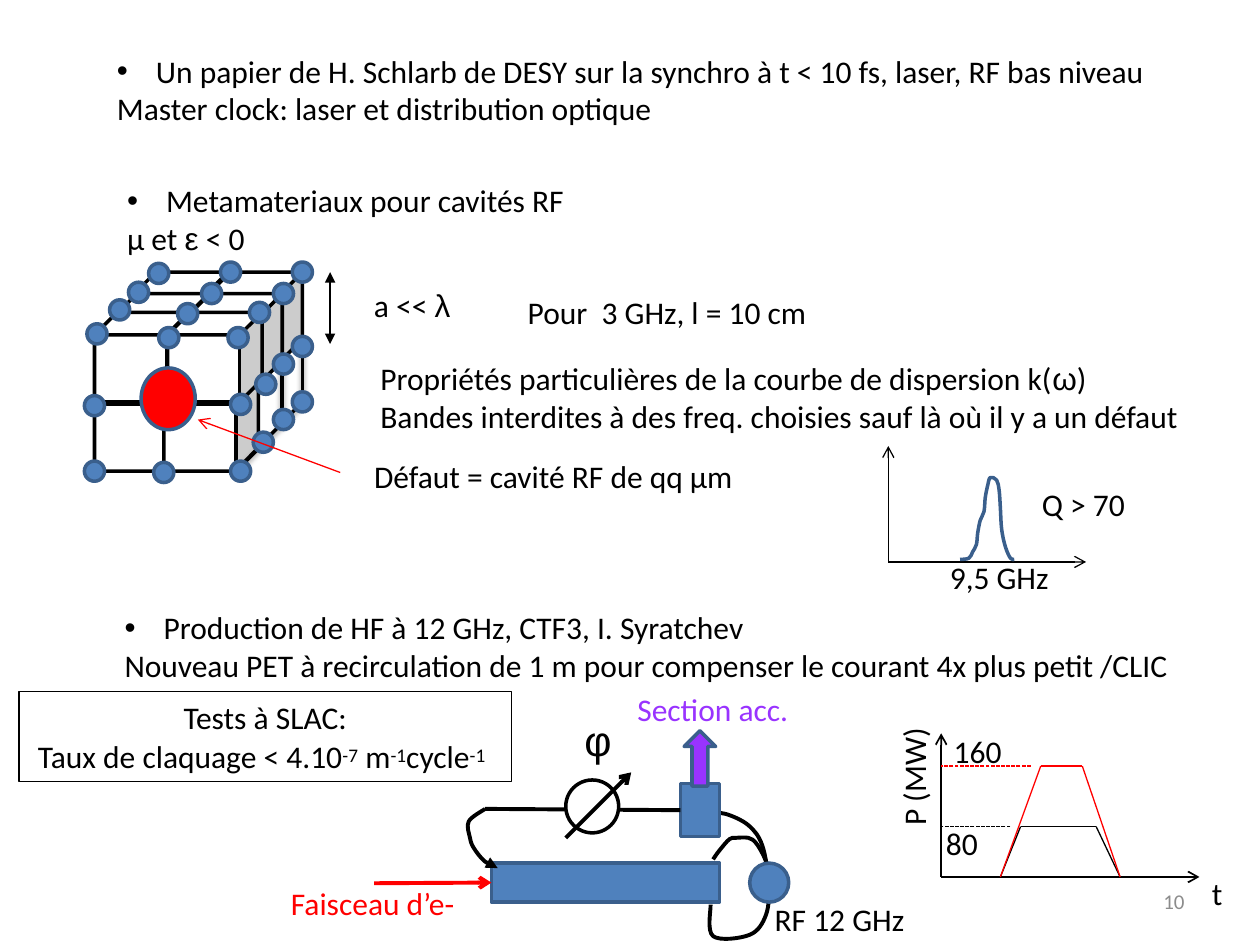
"""Build the slide on synchronisation, metamaterials and 12 GHz production."""
from dataclasses import dataclass
from itertools import groupby
from typing import List, Tuple

from lxml import etree
from pptx import Presentation
from pptx.dml.color import RGBColor
from pptx.enum import dml, shapes, text
from pptx.oxml import ns
from pptx.util import Inches, Pt

Point = Tuple[float, float]
Kind = shapes.MSO_SHAPE
BLACK, RED, BLUE, NAVY, PURPLE = "000000", "FF0000", "4F81BD", "3A5F8C", "9933FF"


@dataclass
class Label:
    x: float
    y: float
    w: float
    words: str
    h: float = 0.4
    color: str = BLACK
    size: int = 18
    bullet: bool = False
    turn: int = 0
    align: text.PP_ALIGN = text.PP_ALIGN.LEFT


@dataclass
class Wire:
    start: Point
    end: Point
    color: str = BLACK
    width: float = 0.75
    head: str = ""
    tail: str = ""
    dash: bool = False
    shade: bool = False


@dataclass
class Curve:
    points: List[Point]
    color: str = BLACK
    width: float = 2.25
    tail: str = ""


def rgb(code: str) -> RGBColor:
    return RGBColor.from_string(code)


def stroke(line, color: str, width: float, head: str = "", tail: str = "") -> None:
    line.color.rgb = rgb(color)
    line.width = Pt(width)
    for tag, kind in (("a:headEnd", head), ("a:tailEnd", tail)):
        if kind:
            etree.SubElement(line._get_or_add_ln(), ns.qn(tag), type=kind)


def add_shape(slide, kind, x, y, w, h, fill=BLUE, line=NAVY):
    item = slide.shapes.add_shape(kind, Inches(x), Inches(y), Inches(w), Inches(h))
    item.shadow.inherit = False
    item.fill.solid()
    item.fill.fore_color.rgb = rgb(fill)
    stroke(item.line, line, 2)
    return item


def add_wire(slide, wire: Wire):
    ends = [Inches(v) for v in wire.start + wire.end]
    item = slide.shapes.add_connector(shapes.MSO_CONNECTOR.STRAIGHT, *ends)
    if wire.dash:
        item.line.dash_style = dml.MSO_LINE.SQUARE_DOT
    stroke(item.line, wire.color, wire.width, wire.head, wire.tail)
    if not wire.shade:
        etree.SubElement(item._element.spPr, ns.qn("a:effectLst"))
    return item


def add_chain(slide, points: List[Point], color: str) -> None:
    for start, end in zip(points, points[1:]):
        add_wire(slide, Wire(start, end, color))


def controls(points: List[Point]) -> List[Point]:
    """Return three Bezier points per step of a smooth curve."""
    ext = [points[0]] + points + [points[-1]]
    out = []
    for a, b, c, d in zip(ext, ext[1:], ext[2:], ext[3:]):
        out += [tuple(q + (r - p) / 6 for p, q, r in zip(a, b, c)),
                tuple(r - (s - q) / 6 for q, r, s in zip(b, c, d)), c]
    return out


def add_curve(slide, curve: Curve) -> None:
    track = [(Inches(x), Inches(y)) for x, y in curve.points[:1] + controls(curve.points)]
    route = slide.shapes.build_freeform(*track[0])
    route.add_line_segments(track[1:], close=False)
    item = route.convert_to_shape()
    steps = list(item._element.iter(ns.qn("a:lnTo")))
    for trio in zip(steps[::3], steps[1::3], steps[2::3]):
        bend = etree.SubElement(trio[0].getparent(), ns.qn("a:cubicBezTo"))
        for step in trio:
            bend.append(step[0])
            step.getparent().remove(step)
    item.shadow.inherit = False
    item.fill.background()
    stroke(item.line, curve.color, curve.width, tail=curve.tail)


def add_bullet(para) -> None:
    props = para._p.get_or_add_pPr()
    props.set("marL", str(Inches(0.31)))
    props.set("indent", str(-Inches(0.31)))
    props.insert(0, props.makeelement(ns.qn("a:buFont"), {"typeface": "Arial"}))
    props.insert(1, props.makeelement(ns.qn("a:buChar"), {"char": "•"}))


def add_runs(para, words: str) -> None:
    """Write runs, with Greek in Arial and text between carets raised."""
    for n, part in enumerate(words.split("^")):
        for greek, chars in groupby(part, lambda c: c in "ελωφ"):
            run = para.add_run()
            run.text = "".join(chars)
            if greek:
                run.font.name = "Arial"
            if n % 2:
                run.font.size = Pt(19)
                run._r.get_or_add_rPr().set("baseline", "20000")


def add_label(slide, label: Label):
    box = slide.shapes.add_textbox(*map(Inches, (label.x, label.y, label.w, label.h)))
    box.rotation = label.turn
    frame = box.text_frame
    frame.word_wrap = False
    frame.auto_size = text.MSO_AUTO_SIZE.SHAPE_TO_FIT_TEXT
    for n, words in enumerate(label.words.split("\n")):
        para = frame.add_paragraph() if n else frame.paragraphs[0]
        para.alignment = label.align
        para.font.name, para.font.size = "Calibri", Pt(label.size)
        para.font.color.rgb = rgb(label.color)
        add_runs(para, words)
        if label.bullet and n == 0:
            add_bullet(para)
    return box


CUBES = [(1.06, 2.16), (1.65, 2.16), (0.91, 2.33), (1.49, 2.33),
         (0.75, 3.03), (0.75, 2.48), (1.3, 3.03), (1.33, 2.48)]
EDGES = [((2.4, 2.68), (2.4, 3.19)), ((1.87, 3.74), (2.4, 3.19)), ((2.24, 2.87), (2.24, 3.38))]
NODES = [(2.32, 2.08), (2.17, 2.25), (1.98, 2.4), (2.32, 2.67), (2.17, 2.81), (2.32, 3.11),
         (2.17, 3.25), (2.01, 3.43), (1.83, 3.66), (2.03, 2.97), (1.6, 2.25), (1.41, 2.41),
         (0.69, 2.57), (0.67, 3.66), (0.67, 3.14), (1.26, 2.6), (1.81, 2.6), (1.83, 3.13),
         (1.22, 3.67), (0.87, 2.38), (1.02, 2.24), (1.18, 2.09), (1.75, 2.08)]
WIRES = [Wire((2.62, 2.16), (2.62, 2.73), width=1.25, head="triangle", tail="triangle"),
         Wire((2.7, 3.75), (1.57, 3.33), RED, tail="arrow"),
         Wire((7.05, 4.46), (7.05, 3.54), tail="arrow"),
         Wire((7.05, 4.46), (8.62, 4.46), tail="arrow"),
         Wire((7.47, 6.96), (7.47, 5.82), width=1, tail="arrow"),
         Wire((7.47, 6.96), (9.52, 6.96), width=1, tail="arrow"),
         Wire((8.02, 6.56), (7.47, 6.56), dash=True),
         Wire((8.18, 6.08), (7.47, 6.08), RED, dash=True)]
PEAK = Curve([(7.62, 4.44), (7.69, 4.43), (7.72, 4.38), (7.75, 4.32), (7.76, 4.23), (7.78, 4.13),
              (7.81, 4.06), (7.82, 3.95), (7.84, 3.85), (7.86, 3.79), (7.91, 3.81), (7.93, 3.89),
              (7.94, 4.03), (7.95, 4.2), (7.98, 4.34), (8.02, 4.43), (8.05, 4.44)], NAVY, 2)
LOOPS = [Curve([(5.64, 7.18), (5.66, 7.43), (5.95, 7.42), (6.08, 7.26), (6.1, 7.01), (6.05, 6.71),
                (5.94, 6.55), (5.76, 6.46), (5.65, 6.46)]),
         Curve([(5.66, 6.82), (5.71, 6.75), (5.79, 6.66), (5.84, 6.65), (5.94, 6.65), (6, 6.69),
                (6.06, 6.79), (6.1, 6.89)])]
RETURN = Curve([(3.85, 6.42), (3.72, 6.52), (3.73, 6.65), (3.76, 6.73), (3.84, 6.83),
                (3.91, 6.86), (3.95, 6.89)], tail="triangle")
LABELS = [
    Label(0.83, 0.36, 8.46, "Un papier de H. Schlarb de DESY sur la synchro à t < 10 fs, laser, RF bas niveau\n"
          "Master clock: laser et distribution optique", 0.71, bullet=True),
    Label(0.91, 1.39, 3.71, "Metamateriaux pour cavités RF\nµ et ε < 0", 0.71, bullet=True),
    Label(2.87, 2.22, 0.83, "a << λ"),
    Label(4.09, 2.28, 2.44, "Pour  3 GHz, l = 10 cm"),
    Label(2.92, 2.8, 6.61, "Propriétés particulières de la courbe de dispersion k(ω)\n"
          "Bandes interdites à des freq. choisies sauf là où il y a un défaut", 0.71),
    Label(2.87, 3.58, 3.09, "Défaut = cavité RF de qq µm"),
    Label(7.44, 4.38, 1, "9,5 GHz"),
    Label(8.17, 3.8, 0.87, "Q > 70"),
    Label(0.89, 4.78, 8.57, "Production de HF à 12 GHz, CTF3, I. Syratchev\n"
          "Nouveau PET à recirculation de 1 m pour compenser le courant 4x plus petit /CLIC", 0.71, bullet=True),
    Label(4.96, 5.43, 1.42, "Section acc.", color=PURPLE),
    Label(4.54, 5.62, 0.38, "φ", 0.5, size=24),
    Label(2.21, 6.97, 1.51, "Faisceau d’e-", color=RED),
    Label(6.05, 7.09, 1.24, "RF 12 GHz"),
    Label(6.76, 5.96, 0.98, "P (MW)", turn=270),
    Label(7.41, 6.49, 0.46, "80"),
    Label(7.47, 5.76, 0.59, "160"),
    Label(9.52, 6.89, 0.29, "t")]
TESTS = Label(0.15, 5.49, 3.91, "Tests à SLAC:\nTaux de claquage < 4.10^-7^ m^-1^cycle^-1^ ", 0.71,
              align=text.PP_ALIGN.CENTER)
NUMBER = Label(7.17, 6.95, 2.33, "10", color="8C8C8C", size=12, align=text.PP_ALIGN.RIGHT)


def draw_lattice(slide) -> None:
    for x, y in CUBES:
        add_shape(slide, Kind.CUBE, x, y, 0.75, 0.71, "FFFFFF", BLACK)
    for start, end in EDGES:
        add_wire(slide, Wire(start, end, width=2, shade=True))
    for x, y in NODES:
        add_shape(slide, Kind.FLOWCHART_CONNECTOR, x, y, 0.16, 0.16)
    add_shape(slide, Kind.FLOWCHART_CONNECTOR, 1.12, 2.92, 0.43, 0.49, RED)


def draw_circuit(slide) -> None:
    tube = add_shape(slide, Kind.RECTANGLE, 3.9, 6.85, 1.81, 0.31)
    for loop in LOOPS:
        add_curve(slide, loop)
    add_shape(slide, Kind.OVAL, 5.95, 6.85, 0.31, 0.31)
    section = add_shape(slide, Kind.RECTANGLE, 5.4, 6.22, 0.31, 0.42)
    arrow = add_shape(slide, Kind.DOWN_ARROW, 5.43, 5.8, 0.25, 0.44, PURPLE)
    arrow._element.spPr.xfrm.set("flipV", "1")
    feed = add_wire(slide, Wire((5.4, 6.41), (3.85, 6.42), width=2.25))
    feed.begin_connect(section, 1)
    add_shape(slide, Kind.FLOWCHART_CONNECTOR, 4.49, 6.19, 0.42, 0.42, "FFFFFF", BLACK)
    add_wire(slide, Wire((4.49, 6.65), (5.01, 6.13), width=2.25, tail="arrow"))
    add_curve(slide, RETURN)
    beam = add_wire(slide, Wire((2.97, 7.01), (3.9, 7.01), RED, 2.25, tail="arrow"))
    beam.end_connect(tube, 1)


def main() -> None:
    deck = Presentation()
    deck.slide_width, deck.slide_height = Inches(10), Inches(7.5)
    slide = deck.slides.add_slide(deck.slide_layouts[6])
    draw_lattice(slide)
    draw_circuit(slide)
    for wire in WIRES:
        add_wire(slide, wire)
    add_curve(slide, PEAK)
    add_chain(slide, [(7.94, 6.96), (8.1, 6.56), (8.7, 6.56), (8.89, 6.96)], BLACK)
    add_chain(slide, [(7.94, 6.96), (8.26, 6.08), (8.59, 6.08), (8.89, 6.96)], RED)
    for label in LABELS:
        add_label(slide, label)
    stroke(add_label(slide, TESTS).line, BLACK, 0.75)
    frame = add_label(slide, NUMBER).text_frame
    frame.word_wrap, frame.auto_size = True, text.MSO_AUTO_SIZE.NONE
    frame.vertical_anchor = text.MSO_ANCHOR.MIDDLE
    deck.save("out.pptx")


if __name__ == "__main__":
    main()
